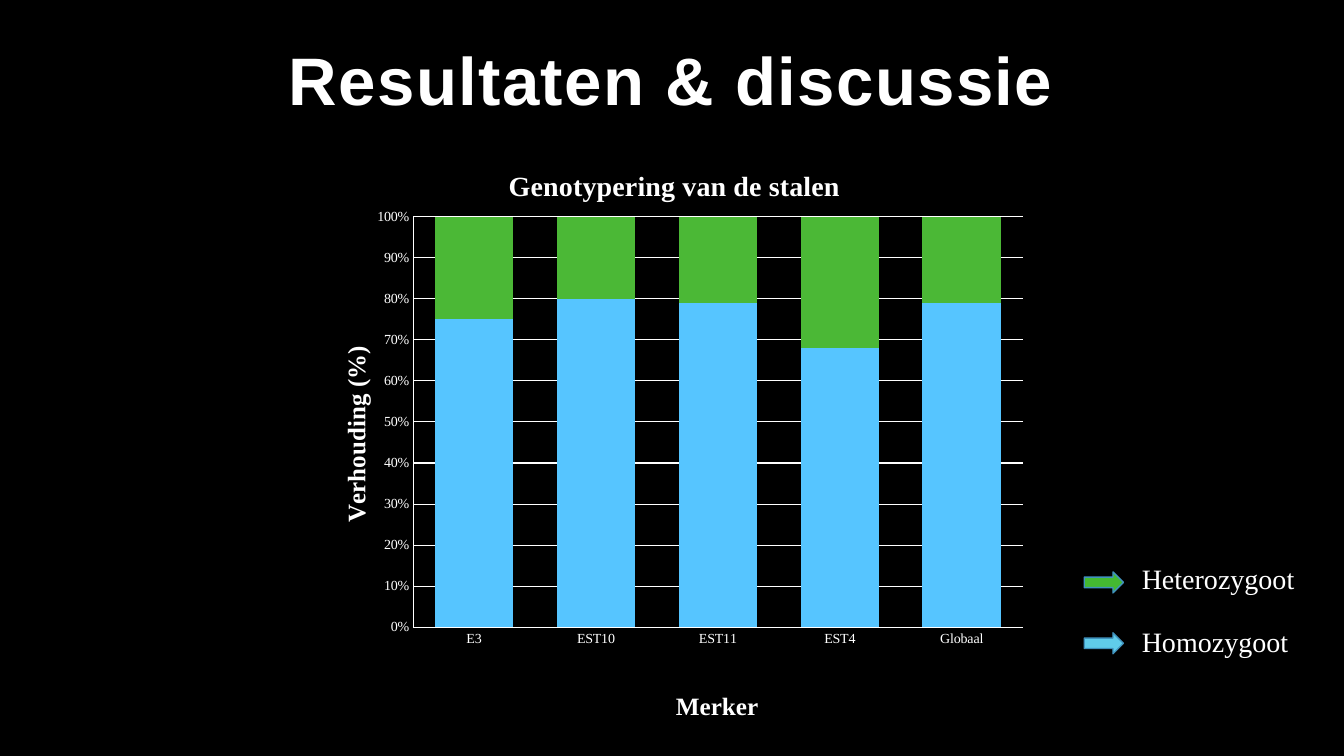
from dataclasses import dataclass

from pptx import Presentation
from pptx.chart.data import CategoryChartData
from pptx.dml.color import RGBColor
from pptx.enum.chart import XL_CHART_TYPE, XL_TICK_MARK
from pptx.enum.shapes import MSO_SHAPE
from pptx.enum.text import MSO_ANCHOR, MSO_AUTO_SIZE, PP_ALIGN
from pptx.oxml import parse_xml
from pptx.oxml.ns import nsdecls, qn
from pptx.util import Pt


@dataclass(frozen=True)
class Theme:
    background: str = "000000"
    text: str = "FFFFFF"
    homozygous: str = "56C5FF"
    heterozygous: str = "4BB836"
    arrow_green: str = "44B931"
    arrow_blue: str = "60CCEA"
    arrow_line: str = "4092BD"
    heading_font: str = "Arial"
    body_font: str = "Times New Roman"
    title_size: int = 48
    chart_title_size: int = 20
    axis_title_size: int = 18
    tick_size: int = 10
    legend_size: int = 20


THEME = Theme()


@dataclass(frozen=True)
class Box:
    left: float
    top: float
    width: float
    height: float

    def lengths(self):
        return Pt(self.left), Pt(self.top), Pt(self.width), Pt(self.height)


def color(value):
    return RGBColor.from_string(value)


def format_font(font, size, name=THEME.body_font, bold=False):
    font.size = Pt(size)
    font.name = name
    font.bold = bold
    font.color.rgb = color(THEME.text)


def write(para, text, size, name=THEME.body_font, bold=False, align=PP_ALIGN.LEFT,
          line_spacing=None, space_before=0, tracking=None):
    para.alignment = align
    para.line_spacing = line_spacing
    para.space_before = Pt(space_before)
    span = para.add_run()
    span.text = text
    format_font(span.font, size, name, bold)
    if tracking:
        span.font._element.set("spc", str(tracking * 100))


def set_layout(parent, **fractions):
    for old in parent.findall(qn("c:layout")):
        parent.remove(old)
    modes = '<c:xMode val="edge"/><c:yMode val="edge"/>'
    values = "".join(f'<c:{key} val="{value}"/>' for key, value in fractions.items())
    target = '<c:layoutTarget val="inner"/>' if "w" in fractions else ""
    layout = parse_xml(f'<c:layout {nsdecls("c")}><c:manualLayout>{target}{modes}{values}'
                       '</c:manualLayout></c:layout>')
    text = parent.find(qn("c:tx"))
    parent.insert(0 if text is None else 1, layout)


def add_title(page, box):
    title = page.shapes.title
    title.left, title.top, title.width, title.height = box.lengths()
    frame = title.text_frame
    frame.word_wrap = True
    frame.auto_size = MSO_AUTO_SIZE.NONE
    frame.vertical_anchor = MSO_ANCHOR.BOTTOM
    write(frame.paragraphs[0], "Resultaten & discussie", THEME.title_size,
          name=THEME.heading_font, bold=True, align=PP_ALIGN.CENTER,
          line_spacing=0.8, tracking=1)


def title_chart_part(title, text, size, x, y):
    write(title.text_frame.paragraphs[0], text, size, bold=True, align=PP_ALIGN.CENTER)
    set_layout(title.element, x=x, y=y)


def add_genotype_chart(page, box):
    data = CategoryChartData()
    data.categories = ["E3", "EST10", "EST11", "EST4", "Globaal"]
    homozygous = [75, 80, 79, 68, 79]
    data.add_series("Homozygoot", homozygous)
    data.add_series("Heterozygoot", [100 - value for value in homozygous])
    chart = page.shapes.add_chart(XL_CHART_TYPE.COLUMN_STACKED_100, *box.lengths(), data).chart
    chart.has_legend = False
    format_font(chart.font, THEME.tick_size)

    plot = chart.plots[0]
    plot.gap_width = 55
    plot.overlap = 100
    plot.vary_by_categories = False
    for series, fill in zip(plot.series, (THEME.homozygous, THEME.heterozygous)):
        series.format.fill.solid()
        series.format.fill.fore_color.rgb = color(fill)

    values, markers = chart.value_axis, chart.category_axis
    values.minimum_scale, values.maximum_scale, values.major_unit = 0, 1, 0.1
    values.tick_labels.number_format = "0%"
    values.tick_labels.number_format_is_linked = False
    values.has_major_gridlines = True
    for line in (values.format.line, markers.format.line, values.major_gridlines.format.line):
        line.color.rgb = color(THEME.text)
        line.width = Pt(0.75)
    for axis in (values, markers):
        axis.major_tick_mark = axis.minor_tick_mark = XL_TICK_MARK.NONE

    chart.has_title = True
    title_chart_part(chart.chart_title, "Genotypering van de stalen",
                     THEME.chart_title_size, 0.27, 0.04)
    title_chart_part(markers.axis_title, "Merker", THEME.axis_title_size, 0.5, 0.94)
    title_chart_part(values.axis_title, "Verhouding (%)", THEME.axis_title_size, 0.04, 0.35)
    values.axis_title.element.xpath(".//a:bodyPr")[0].set("rot", "-5400000")
    set_layout(chart.element.xpath("c:chart/c:plotArea")[0], x=0.146, y=0.132, w=0.836, h=0.707)


def add_legend(page, box):
    row_pitch, text_indent = 43.5, 34
    entries = [("Heterozygoot", THEME.arrow_green), ("Homozygoot", THEME.arrow_blue)]
    label_box = Box(box.left + text_indent, box.top, box.width - text_indent, box.height)
    frame = page.shapes.add_textbox(*label_box.lengths()).text_frame
    frame.word_wrap = True
    for row, (label, fill) in enumerate(entries):
        para = frame.add_paragraph() if row else frame.paragraphs[0]
        write(para, label, THEME.legend_size, line_spacing=0.9, space_before=23 * row)
        arrow_box = Box(box.left, box.top + 8 + row * row_pitch, 28, 15)
        arrow = page.shapes.add_shape(MSO_SHAPE.RIGHT_ARROW, *arrow_box.lengths())
        arrow.shadow.inherit = False
        arrow.fill.solid()
        arrow.fill.fore_color.rgb = color(fill)
        arrow.line.color.rgb = color(THEME.arrow_line)
        arrow.line.width = Pt(1)


def main():
    deck = Presentation()
    deck.slide_width, deck.slide_height = Pt(960), Pt(540)
    page = deck.slides.add_slide(deck.slide_layouts[5])
    page.background.fill.solid()
    page.background.fill.fore_color.rgb = color(THEME.background)
    add_title(page, Box(119.5, 30, 720, 58.5))
    add_genotype_chart(page, Box(219, 100, 521, 420))
    add_legend(page, Box(774.5, 400.5, 159, 72.5))
    deck.save("out.pptx")


if __name__ == "__main__":
    main()
